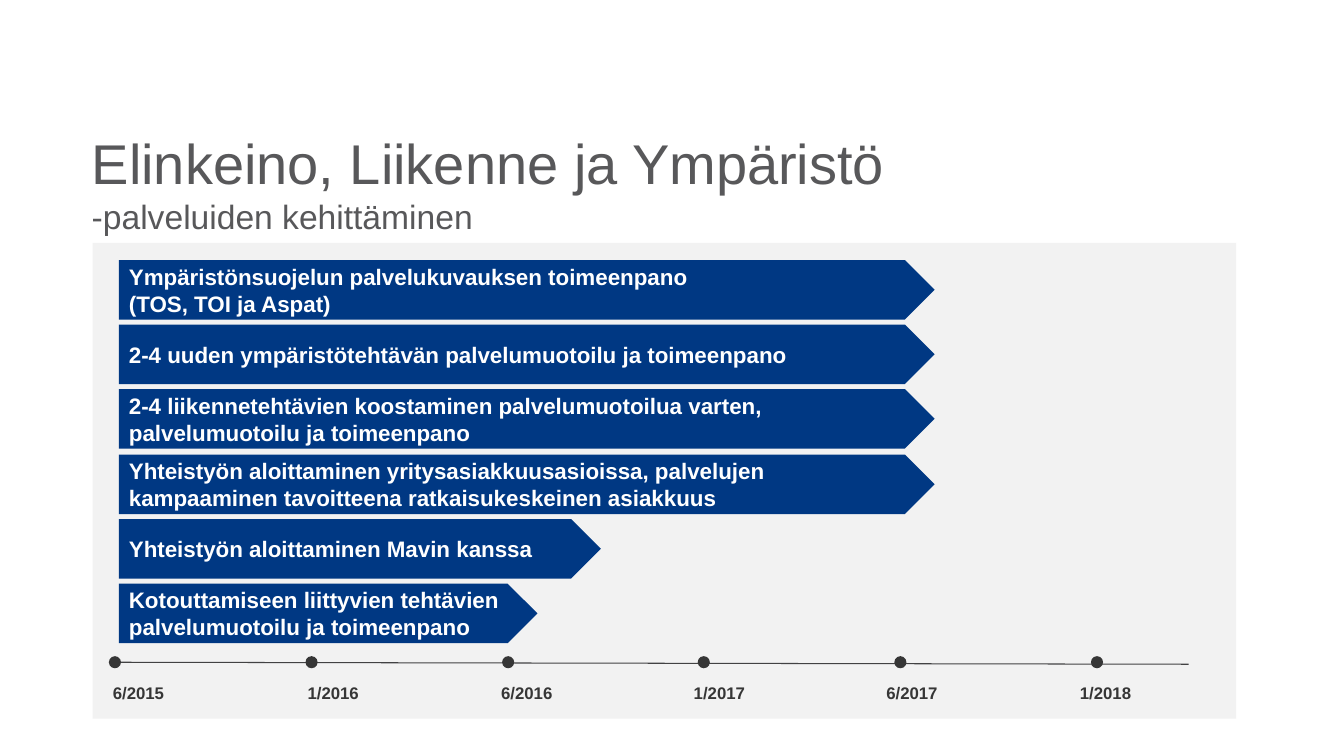
from lxml import etree
from pptx import Presentation
from pptx.dml.color import RGBColor
from pptx.enum.shapes import MSO_CONNECTOR, MSO_SHAPE
from pptx.enum.text import MSO_ANCHOR, PP_ALIGN
from pptx.oxml.ns import qn
from pptx.util import Pt

PX = 9144  # 100 px to the inch
FONT = "Arial"
RECT, PLATE, OVAL = MSO_SHAPE.RECTANGLE, MSO_SHAPE.PENTAGON, MSO_SHAPE.OVAL
STRAIGHT = MSO_CONNECTOR.STRAIGHT
TOP, MIDDLE = MSO_ANCHOR.TOP, MSO_ANCHOR.MIDDLE
LEFT, CENTER = PP_ALIGN.LEFT, PP_ALIGN.CENTER
HEX = {"panel": "F2F2F2", "bar": "003883", "white": "FFFFFF",
       "dark": "363636", "axis": "424243", "title": "58585A"}

# Text lines and bar width
TASKS = [
    (["Ympäristönsuojelun palvelukuvauksen toimeenpano", "(TOS, TOI ja Aspat)"], 809),
    (["2-4 uuden ympäristötehtävän palvelumuotoilu ja toimeenpano"], 809),
    (["2-4 liikennetehtävien koostaminen palvelumuotoilua varten, "
      "palvelumuotoilu ja toimeenpano"], 809),
    (["Yhteistyön aloittaminen yritysasiakkuusasioissa, palvelujen "
      "kampaaminen tavoitteena ratkaisukeskeinen asiakkuus"], 809),
    (["Yhteistyön aloittaminen Mavin kanssa"], 478),
    (["Kotouttamiseen liittyvien tehtävien palvelumuotoilu ja toimeenpano"], 415),
]
DATES = ["6/2015", "1/2016", "6/2016", "1/2017", "6/2017", "1/2018"]


def emu(*px):
    return [round(n) * PX for n in px]


def color(name):
    return RGBColor.from_string(HEX[name])


def shape(slide, kind, box, fill):
    item = slide.shapes.add_shape(kind, *emu(*box))
    item.shadow.inherit = False
    item.fill.solid()
    item.fill.fore_color.rgb = color(fill)
    item.line.fill.background()
    return item


def write(frame, lines, ink, bold=False, align=LEFT, anchor=TOP):
    """Fill one paragraph with (text, size) lines parted by line breaks."""
    frame.word_wrap = True
    frame.vertical_anchor = anchor
    para = frame.paragraphs[0]
    para.alignment = align
    for i, (text, size) in enumerate(lines):
        if i:
            para.add_line_break()
        run = para.add_run()
        run.text = text
        run.font.name = FONT
        run.font.size = Pt(size)
        run.font.bold = bold
        run.font.color.rgb = color(ink)


def title(slide, x, y, w, h):
    frame = slide.shapes.add_textbox(*emu(x, y, w, h)).text_frame
    frame.margin_left, frame.margin_top = emu(7, 12)
    write(frame, [("Elinkeino, Liikenne ja Ympäristö", 40),
                  ("-palveluiden kehittäminen", 24)], "title")


def bars(slide, x, y, h, step):
    for i, (lines, w) in enumerate(TASKS):
        bar = shape(slide, PLATE, (x, y + i * step, w, h), "bar")
        write(bar.text_frame, [(line, 16) for line in lines],
              "white", bold=True, anchor=MIDDLE)


def axis(slide, x, y, w):
    line = slide.shapes.add_connector(STRAIGHT, *emu(x, y + 6, x + w, y + 8))
    line.line.color.rgb = color("axis")
    line.line.width = Pt(0.75)
    etree.SubElement(line._element.spPr, qn("a:effectLst"))
    for i, date in enumerate(DATES):
        shape(slide, OVAL, (x + i * 194.8, y, 12, 12), "dark")
        # The first date starts at the axis; the others are centred
        left, wide = (x - 43.5 + i * 191.5, 149) if i else (x - 6, 102)
        box = slide.shapes.add_textbox(*emu(left, y + 21, wide, 30))
        write(box.text_frame, [(date, 12)], "dark", bold=True,
              align=CENTER if i else LEFT)


def plan(slide, x, y, w, h):
    shape(slide, RECT, (x, y, w, h), "panel")
    bars(slide, x + 26, y + 17, 59, 64.2)
    axis(slide, x + 16, y + 410, w - 63)


def main():
    deck = Presentation()
    deck.slide_width, deck.slide_height = emu(1333, 750)
    slide = deck.slides.add_slide(deck.slide_layouts[6])
    plan(slide, 92, 241, 1134, 472)
    title(slide, 84, 116, 1020, 70)
    deck.save("out.pptx")


if __name__ == "__main__":
    main()
